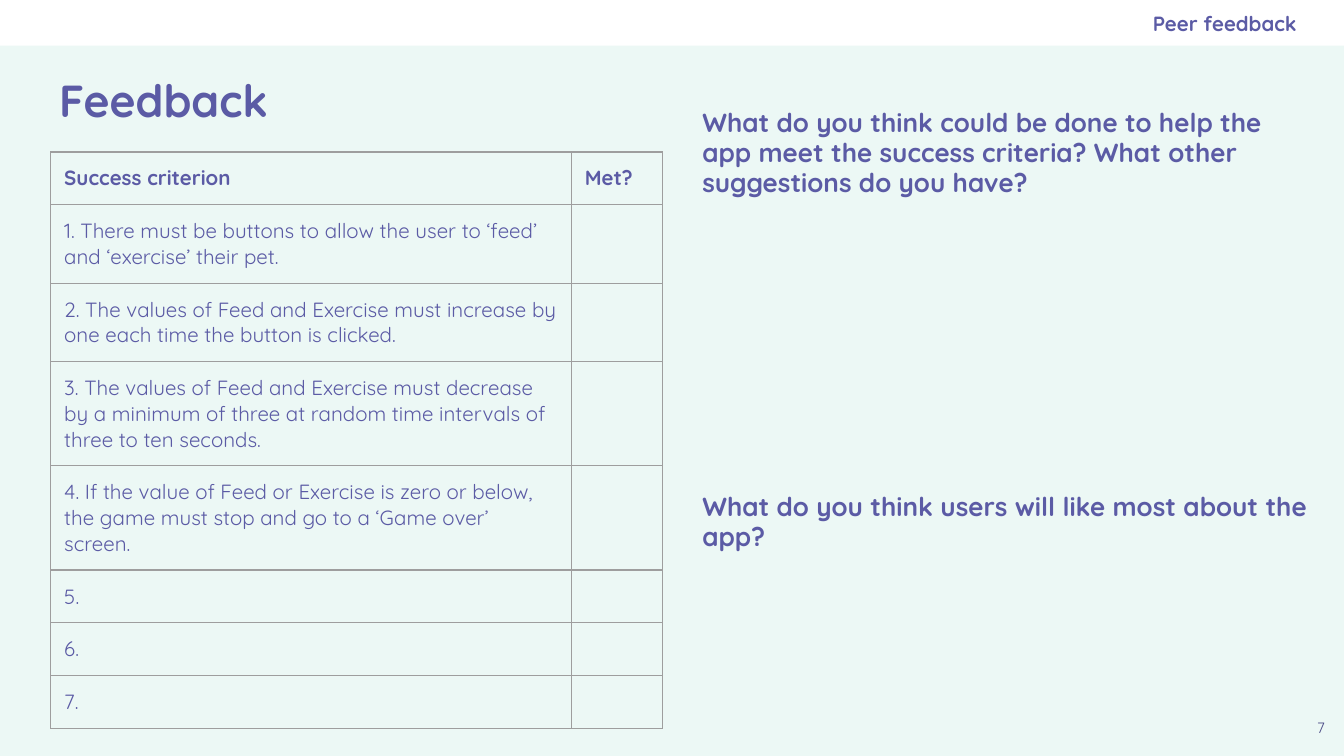
"""Build the peer feedback slide with its success criteria table."""
from lxml import etree
from pptx import Presentation
from pptx.dml.color import RGBColor
from pptx.enum.shapes import MSO_SHAPE
from pptx.enum.text import MSO_ANCHOR, PP_ALIGN
from pptx.oxml.ns import qn
from pptx.util import Pt

RECT = MSO_SHAPE.RECTANGLE
TOP, MIDDLE = MSO_ANCHOR.TOP, MSO_ANCHOR.MIDDLE
LEFT, CENTER, RIGHT = PP_ALIGN.LEFT, PP_ALIGN.CENTER, PP_ALIGN.RIGHT
MINT = RGBColor(0xEC, 0xF8, 0xF5)
WHITE = RGBColor(0xFF, 0xFF, 0xFF)
PURPLE = RGBColor(0x5B, 0x5B, 0xA5)
DARK_PURPLE = RGBColor(0x49, 0x49, 0x85)
GREY = RGBColor(0x9E, 0x9E, 0x9E)
FONT = "Quicksand"
WIDTH, HEIGHT, BAR_HEIGHT, INSET = 720, 405, 24.5, 7.2
TABLE_LEFT, TABLE_TOP = 27.2, 81.4
COLUMNS = (278.9, 48.8)
LINE_HEIGHT = 13.75

TITLE = "Feedback"
ROWS = [
    ("Success criterion", "Met?", 1),
    ("1. There must be buttons to allow the user to ‘feed’ and ‘exercise’ their pet.", "", 2),
    ("2. The values of Feed and Exercise must increase by one each time the button is clicked.", "", 2),
    ("3. The values of Feed and Exercise must decrease by a minimum of three at random "
     "time intervals of three to ten seconds.", "", 3),
    ("4. If the value of Feed or Exercise is zero or below, the game must stop and go to "
     "a ‘Game over’ screen.", "", 3),
    ("5.", "", 1),
    ("6.", "", 1),
    ("7.", "", 1),
]
HEADING = dict(size=Pt(11), bold=True)
BODY = dict(size=Pt(11), bold=False)
QUESTION = dict(size=Pt(14), bold=True)
TEXTS = [
    ("Peer feedback", (414, 0, 280.8, BAR_HEIGHT), HEADING, PURPLE, RIGHT, MIDDLE, 0, 1),
    ("What do you think could be done to help the app meet the success criteria? "
     "What other suggestions do you have?",
     (369.2, 51.2, 344, 39), QUESTION, PURPLE, LEFT, TOP, INSET, 0.95),
    ("What do you think users will like most about the app?",
     (369.2, 257, 344, 27.4), QUESTION, PURPLE, LEFT, TOP, INSET, 0.95),
    ("7", (695.5, 380.2, 24.5, 24.5), dict(size=Pt(8), bold=False),
     DARK_PURPLE, CENTER, TOP, INSET, 1),
]


def set_attrs(obj, values):
    for name, value in values.items():
        setattr(obj, name, value)


def write(tf, text, font, color=PURPLE, align=LEFT, spacing=1):
    p = tf.paragraphs[0]
    set_attrs(p, dict(alignment=align, line_spacing=spacing))
    if not text:
        etree.SubElement(p._p, qn("a:endParaRPr"), sz=str(int(font["size"].pt * 100)))
        return
    r = p.add_run()
    r.text = text
    set_attrs(r.font, dict(font, name=FONT))
    r.font.color.rgb = color


def set_frame(tf, anchor, right=INSET):
    set_attrs(tf, dict(word_wrap=True, vertical_anchor=anchor, margin_left=Pt(INSET),
                       margin_top=Pt(INSET), margin_right=Pt(right), margin_bottom=Pt(INSET)))


def set_borders(cell):
    tc_pr = cell._tc.get_or_add_tcPr()
    for i, side in enumerate(("lnL", "lnR", "lnT", "lnB")):
        ln = etree.Element(qn("a:" + side), w=str(Pt(0.75)))
        fill = etree.SubElement(ln, qn("a:solidFill"))
        etree.SubElement(fill, qn("a:srgbClr"), val=str(GREY))
        tc_pr.insert(i, ln)


def add_criteria_table(s):
    heights = [lines * LINE_HEIGHT + 2 * INSET for *_, lines in ROWS]
    box = (TABLE_LEFT, TABLE_TOP, sum(COLUMNS), sum(heights))
    table = s.shapes.add_table(len(ROWS), len(COLUMNS), *map(Pt, box)).table
    set_attrs(table, dict(first_row=False, horz_banding=False))
    for column, width in zip(table.columns, COLUMNS):
        column.width = Pt(width)
    for i, (row, height) in enumerate(zip(table.rows, heights)):
        row.height = Pt(height)
        for cell, text in zip(row.cells, ROWS[i]):
            set_attrs(cell, dict(margin_left=Pt(INSET), margin_right=Pt(INSET),
                                 margin_top=Pt(INSET), margin_bottom=Pt(INSET)))
            cell.fill.background()
            set_borders(cell)
            write(cell.text_frame, text, BODY if i else HEADING)


def main():
    prs = Presentation()
    set_attrs(prs, dict(slide_width=Pt(WIDTH), slide_height=Pt(HEIGHT)))
    s = prs.slides.add_slide(prs.slide_layouts[5])
    s.background.fill.solid()
    s.background.fill.fore_color.rgb = MINT

    bar = s.shapes.add_shape(RECT, 0, 0, Pt(WIDTH), Pt(BAR_HEIGHT))
    bar.shadow.inherit = False
    bar.fill.solid()
    bar.fill.fore_color.rgb = WHITE
    bar.line.fill.background()

    title = s.shapes.title
    set_attrs(title, dict(left=Pt(24.5), top=Pt(25.2), width=Pt(671), height=Pt(56.2)))
    set_frame(title.text_frame, MIDDLE)
    write(title.text_frame, TITLE, dict(size=Pt(24), bold=True))

    add_criteria_table(s)
    for text, box, font, color, align, anchor, right, spacing in TEXTS:
        tf = s.shapes.add_textbox(*map(Pt, box)).text_frame
        set_frame(tf, anchor, right)
        write(tf, text, font, color, align, spacing)
    prs.save("out.pptx")


if __name__ == "__main__":
    main()
